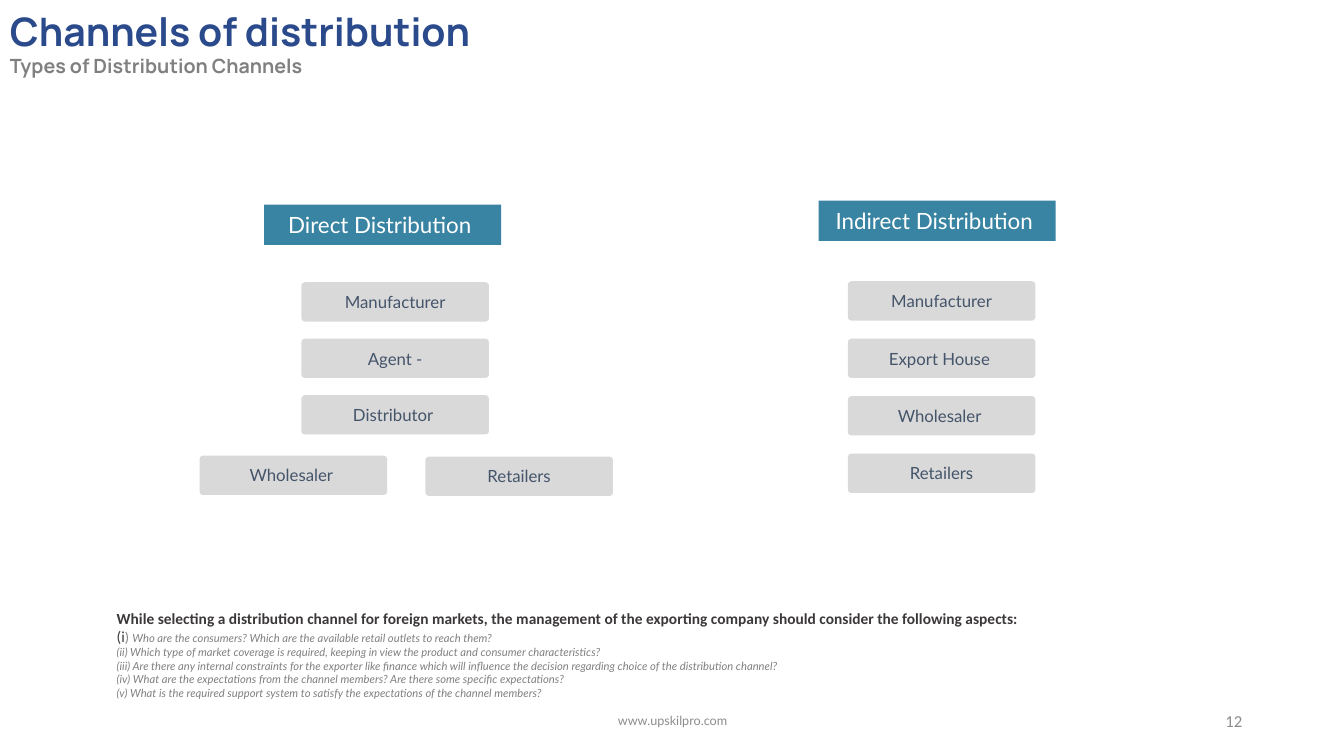
from pptx import Presentation
from pptx.dml.color import RGBColor
from pptx.enum.shapes import MSO_SHAPE
from pptx.enum.text import MSO_ANCHOR, PP_ALIGN
from pptx.util import Inches, Pt


def style(r, size, color, font="Lato", bold=False, italic=False):
    r.font.size, r.font.name = Pt(size), font
    r.font.bold, r.font.italic = bold, italic
    r.font.color.rgb = RGBColor.from_string(color)


def add_box(kind, text, x, y, w, h, fill, size, color):
    sp = s.shapes.add_shape(kind, Inches(x), Inches(y), Inches(w), Inches(h))
    sp.shadow.inherit = False
    sp.fill.solid()
    sp.fill.fore_color.rgb = RGBColor.from_string(fill)
    sp.line.fill.background()
    tf = sp.text_frame
    tf.text = text
    tf.vertical_anchor = MSO_ANCHOR.MIDDLE
    tf.paragraphs[0].alignment = PP_ALIGN.CENTER
    style(tf.paragraphs[0].runs[0], size, color)
    return sp


prs = Presentation()
prs.slide_width, prs.slide_height = Inches(13.33), Inches(7.5)
s = prs.slides.add_slide(prs.slide_layouts[6])

# Channel members
members = [
    ("Manufacturer", 2.99, 2.8),
    ("Agent -", 2.99, 3.36),
    ("Distributor ", 2.99, 3.92),
    ("Wholesaler ", 1.98, 4.52),
    ("Retailers", 4.22, 4.53),
]
indirect = ["Manufacturer", "Export House ", "Wholesaler ", "Retailers"]
members += [(name, 8.41, 2.79 + 0.57 * i) for i, name in enumerate(indirect)]
for name, x, y in members:
    sp = add_box(MSO_SHAPE.ROUNDED_RECTANGLE, name, x, y, 1.86, 0.39,
                 "D9D9D9", 12, "44546A")
    sp.adjustments[0] = 0.09

# Column headings
for text, x, y in [("Direct Distribution ", 2.62, 2.03),
                   ("Indirect Distribution ", 8.12, 1.99)]:
    sp = add_box(MSO_SHAPE.RECTANGLE, text, x, y, 2.35, 0.4,
                 "3984A3", 16, "FFFFFF")
    tf = sp.text_frame
    tf.margin_left = tf.margin_right = tf.margin_top = tf.margin_bottom = 0

# Text boxes: position, anchor, alignment, paragraphs of (text, style) runs
note = (8, "808080", "Lato", False, True)
aspects = [
    "(ii) Which type of market coverage is required, keeping in view the product and consumer characteristics?",
    "(iii) Are there any internal constraints for the exporter like finance which will influence the decision regarding choice of the distribution channel?",
    "(iv) What are the expectations from the channel members? Are there some specific expectations?",
    "(v) What is the required support system to satisfy the expectations of the channel members?",
]
considerations = [
    [("While selecting a distribution channel for foreign markets, the management of the exporting company should consider the following aspects:",
      (11, "3B3838", "Calibri", True))],
    [("(i", (11, "3B3838", "Calibri")),
     (") ", (10, "808080", "Calibri")),
     ("Who are the consumers? Which are the available retail outlets to reach them?", note)],
] + [[(text, note)] for text in aspects]
title = [
    [("Channels of distribution", (28, "2A4A8B", "Manrope", True))],
    [("Types of Distribution Channels", (14, "808080", "Manrope", True))],
]
page_number = [[("12", (12, "8C8C8C", "Calibri"))]]
footer = [[("www.upskilpro.com", (9, "8C8C8C"))]]

for at, anchor, align, paragraphs in [
    ((1.06, 5.99, 10.53, 1.01), MSO_ANCHOR.TOP, PP_ALIGN.LEFT, considerations),
    ((0, 0.02, 6.92, 0.81), MSO_ANCHOR.TOP, PP_ALIGN.LEFT, title),
    ((9.42, 6.95, 3, 0.4), MSO_ANCHOR.MIDDLE, PP_ALIGN.RIGHT, page_number),
    ((4.42, 6.95, 4.5, 0.4), MSO_ANCHOR.MIDDLE, PP_ALIGN.CENTER, footer),
]:
    tf = s.shapes.add_textbox(*[Inches(v) for v in at]).text_frame
    tf.word_wrap = True
    tf.vertical_anchor = anchor
    for i, runs in enumerate(paragraphs):
        p = tf.add_paragraph() if i else tf.paragraphs[0]
        p.alignment = align
        for text, look in runs:
            r = p.add_run()
            r.text = text
            style(r, *look)

prs.save("out.pptx")
